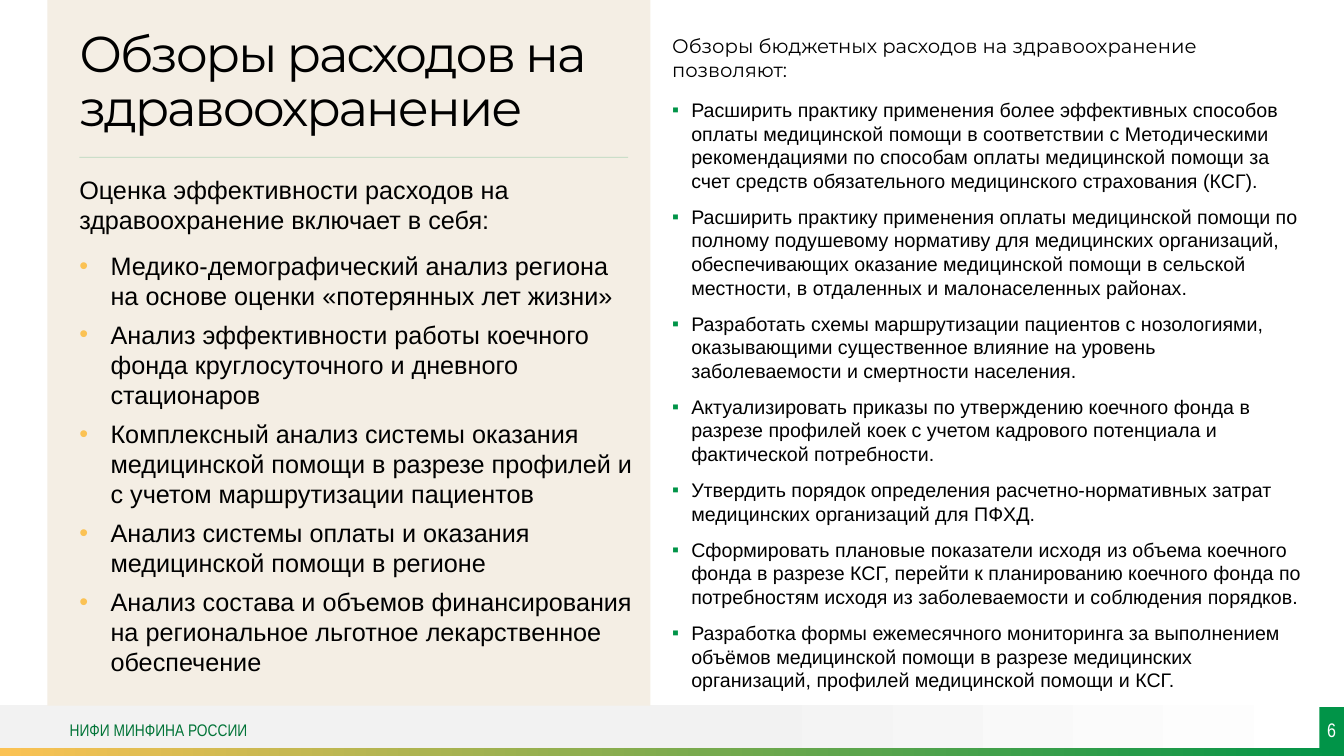
"""Build the slide on health care spending reviews."""
from dataclasses import dataclass
from typing import Optional

from lxml.etree import SubElement
from pptx import Presentation
from pptx.dml.color import RGBColor
from pptx.enum.shapes import MSO_CONNECTOR as Connector, MSO_SHAPE as Preset
from pptx.enum.text import MSO_ANCHOR as Anchor, PP_ALIGN as Align
from pptx.oxml.ns import qn
from pptx.util import Emu, Inches, Pt

WIDTH, HEIGHT = Inches(13.33), Inches(7.5)
BLACK = RGBColor(0x00, 0x00, 0x00)
WHITE = RGBColor(0xFF, 0xFF, 0xFF)
GREY = RGBColor(0xF2, 0xF2, 0xF2)
CREAM = RGBColor(0xF4, 0xEE, 0xE4)
AMBER = RGBColor(0xFB, 0xC2, 0x54)
GREEN = RGBColor(0x01, 0x94, 0x48)
DARK_GREEN = RGBColor(0x02, 0x74, 0x38)


@dataclass(frozen=True)
class Area:
    """Place on the slide, in percent of its width and height."""
    left: float
    top: float
    width: float
    height: float

    def emu(self) -> tuple:
        """Return left, top, width and height as lengths."""
        return (across(self.left), down(self.top),
                across(self.width), down(self.height))


@dataclass(frozen=True)
class Band:
    """Rectangle with a plain fill or a left-to-right gradient."""
    area: Area
    start: RGBColor
    end: Optional[RGBColor] = None
    start_at: float = 0


@dataclass(frozen=True)
class Bullet:
    """Bullet sign with its colour and hanging indent."""
    sign: str
    colour: RGBColor
    indent: float


BANDS = (
    Band(Area(0, 93.2, 100, 6.13), GREY, WHITE, 0.53),
    Band(Area(0, 98.93, 100, 1.07), AMBER, GREEN),
    Band(Area(3.53, 0, 44.86, 93.33), CREAM),
)
PAGE_NUMBER = Band(Area(98.16, 93.52, 1.84, 6), GREEN)
FOOTER = Area(5.18, 93.52, 34.58, 6)
TITLE = Area(5.9, 1.8, 42.01, 16.4)
ASSESSMENT = Area(5.9, 23.07, 42.01, 65.87)
BENEFITS = Area(49.27, 3.87, 48.91, 89.33)
RULE_END, RULE_TOP, RULE_OPACITY = 46.74, 20.8, 25
DOT = Bullet("•", AMBER, 2.33)
SQUARE = Bullet("▪", GREEN, 1.43)

ASSESSMENT_PARTS = (
    "Медико-демографический анализ региона\nна основе оценки «потерянных лет жизни»",
    "Анализ эффективности работы коечного фонда круглосуточного и дневного стационаров",
    "Комплексный анализ системы оказания медицинской помощи в разрезе профилей "
    "и с учетом маршрутизации пациентов",
    "Анализ системы оплаты и оказания медицинской помощи в регионе",
    "Анализ состава и объемов финансирования на региональное льготное "
    "лекарственное обеспечение",
)
REVIEW_BENEFITS = (
    "Расширить практику применения более эффективных способов оплаты медицинской "
    "помощи в соответствии с Методическими рекомендациями по способам оплаты "
    "медицинской помощи за счет средств обязательного медицинского страхования (КСГ).",
    "Расширить практику применения оплаты медицинской помощи по полному подушевому "
    "нормативу для медицинских организаций, обеспечивающих оказание медицинской "
    "помощи в сельской местности, в отдаленных и малонаселенных районах.",
    "Разработать схемы маршрутизации пациентов с нозологиями, оказывающими "
    "существенное влияние на уровень заболеваемости и смертности населения.",
    "Актуализировать приказы по утверждению коечного фонда в разрезе профилей коек "
    "с учетом кадрового потенциала и фактической потребности.",
    "Утвердить порядок определения расчетно-нормативных затрат медицинских "
    "организаций для ПФХД.",
    "Сформировать плановые показатели исходя из объема коечного фонда в разрезе КСГ, "
    "перейти к планированию коечного фонда по потребностям исходя из заболеваемости "
    "и соблюдения порядков.",
    "Разработка формы ежемесячного мониторинга за выполнением объёмов медицинской "
    "помощи в разрезе медицинских организаций, профилей медицинской помощи и КСГ.",
)


def across(percent: float) -> Emu:
    """Turn a percentage of the slide's width into a length."""
    return Emu(round(WIDTH * percent / 100))


def down(percent: float) -> Emu:
    """Turn a percentage of the slide's height into a length."""
    return Emu(round(HEIGHT * percent / 100))


def draw_band(slide, band: Band):
    """Draw a rectangle without outline or shadow."""
    rectangle = slide.shapes.add_shape(Preset.RECTANGLE, *band.area.emu())
    rectangle.shadow.inherit = False
    rectangle.line.fill.background()
    if band.end is None:
        rectangle.fill.solid()
        rectangle.fill.fore_color.rgb = band.start
    else:
        rectangle.fill.gradient()
        rectangle.fill.gradient_angle = 0
        first, last = rectangle.fill.gradient_stops
        first.color.rgb, first.position = band.start, band.start_at
        last.color.rgb, last.position = band.end, 1
    return rectangle


def set_up_frame(frame, anchor: Anchor = Anchor.TOP, padded: bool = False):
    """Make a text frame wrap and set its anchor and margins."""
    frame.word_wrap = True
    frame.vertical_anchor = anchor
    if not padded:
        frame.margin_left = frame.margin_right = 0
        frame.margin_top = frame.margin_bottom = 0
    return frame


def add_area(slide, area: Area, **setup):
    """Add a text box and return its frame."""
    return set_up_frame(slide.shapes.add_textbox(*area.emu()).text_frame, **setup)


def write(frame, text: str, *, size: float, font: str = "Arial",
          colour: RGBColor = BLACK, align: Align = Align.LEFT,
          before: float = 0, after: float = 0, pitch: float = 1,
          tracking: float = 0, bullet: Optional[Bullet] = None) -> None:
    """Write one formatted paragraph at the end of a text frame."""
    paragraph = frame.paragraphs[0]
    if paragraph.runs:
        paragraph = frame.add_paragraph()
    paragraph.text = text
    if bullet:
        layout = paragraph._p.get_or_add_pPr()
        indent = across(bullet.indent)
        layout.set("marL", str(indent))
        layout.set("indent", str(-indent))
        tint = SubElement(layout, qn("a:buClr"))
        SubElement(tint, qn("a:srgbClr"), val=str(bullet.colour))
        SubElement(layout, qn("a:buFont"), typeface="Arial")
        SubElement(layout, qn("a:buChar"), char=bullet.sign)
    paragraph.alignment = align
    paragraph.space_before, paragraph.space_after = Pt(before), Pt(after)
    paragraph.line_spacing = pitch
    for run in paragraph.runs:
        run.font.size, run.font.name = Pt(size), font
        run.font.color.rgb = colour
        if tracking:
            run.font._element.set("spc", str(round(tracking * 100)))


def draw_rule(slide) -> None:
    """Draw the thin pale line under the title."""
    rule = slide.shapes.add_connector(
        Connector.STRAIGHT, across(TITLE.left), down(RULE_TOP),
        across(RULE_END), down(RULE_TOP))
    rule.line.color.rgb, rule.line.width = GREEN, Pt(0.5)
    tint = rule._element.spPr.find(".//" + qn("a:srgbClr"))
    SubElement(tint, qn("a:alpha"), val=str(RULE_OPACITY * 1000))
    SubElement(rule._element.spPr, qn("a:effectLst"))


def main() -> None:
    """Build and save the presentation."""
    deck = Presentation()
    deck.slide_width, deck.slide_height = WIDTH, HEIGHT
    slide = deck.slides.add_slide(deck.slide_layouts[6])
    for band in BANDS:
        draw_band(slide, band)

    write(add_area(slide, FOOTER, anchor=Anchor.MIDDLE), "НИФИ МИНФИНА РОССИИ",
          size=12, font="Arial Narrow", colour=DARK_GREEN)

    assessment = add_area(slide, ASSESSMENT)
    write(assessment, "Оценка эффективности расходов на здравоохранение включает в себя:",
          size=18, after=5)
    for part in ASSESSMENT_PARTS:
        write(assessment, part, size=18, before=6, bullet=DOT)

    number = set_up_frame(draw_band(slide, PAGE_NUMBER).text_frame, Anchor.MIDDLE)
    write(number, "6", size=14, font="Arial Narrow", colour=WHITE, align=Align.CENTER)

    write(add_area(slide, TITLE, anchor=Anchor.BOTTOM), "Обзоры расходов на здравоохранение",
          size=36, font="Montserrat", pitch=0.9, tracking=-1.5)
    draw_rule(slide)

    benefits = add_area(slide, BENEFITS, padded=True)
    write(benefits, "Обзоры бюджетных расходов на здравоохранение позволяют:",
          size=14, font="Montserrat", after=6)
    for benefit in REVIEW_BENEFITS:
        write(benefits, benefit, size=14, before=6, after=3, bullet=SQUARE)
    deck.save("out.pptx")


if __name__ == "__main__":
    main()
